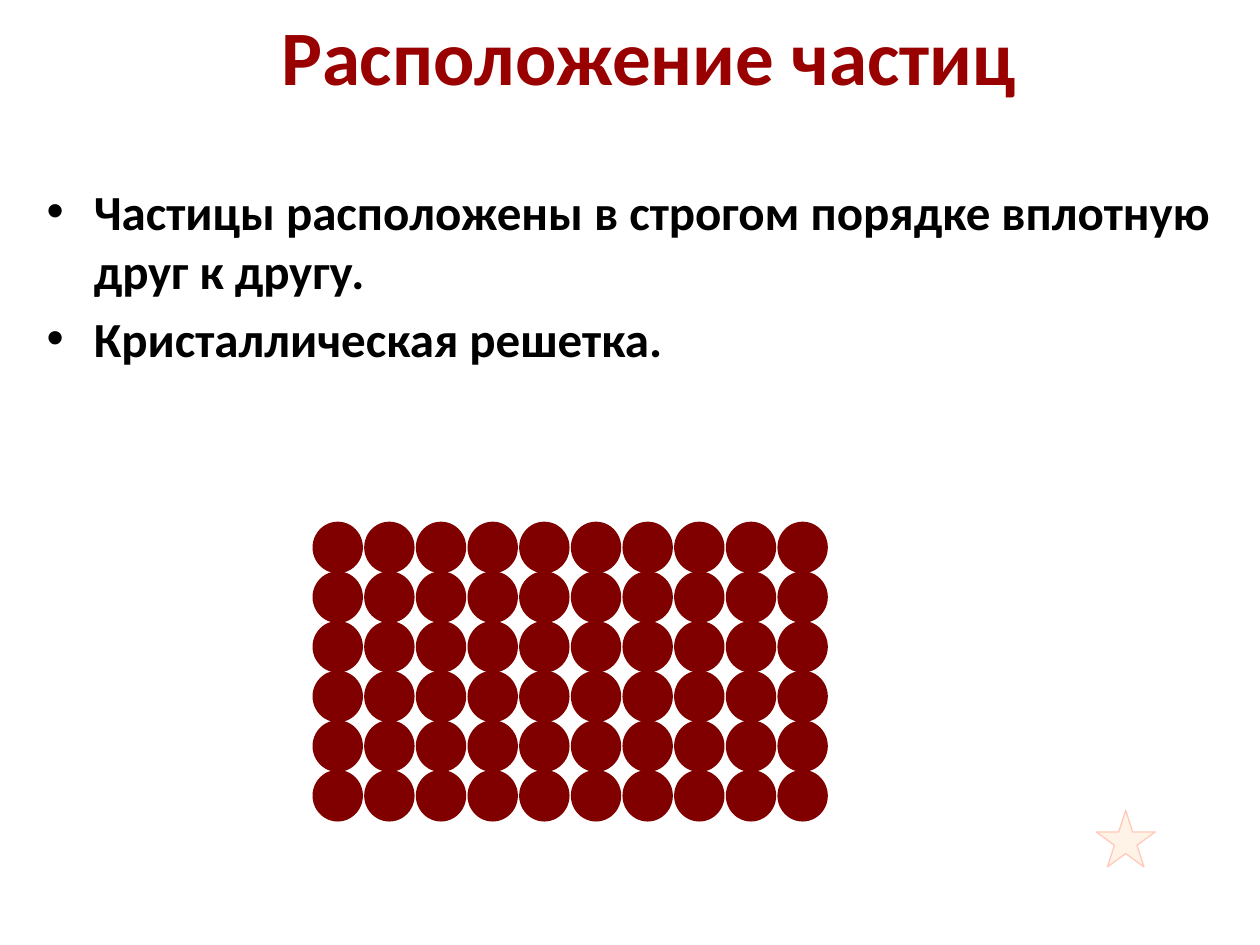
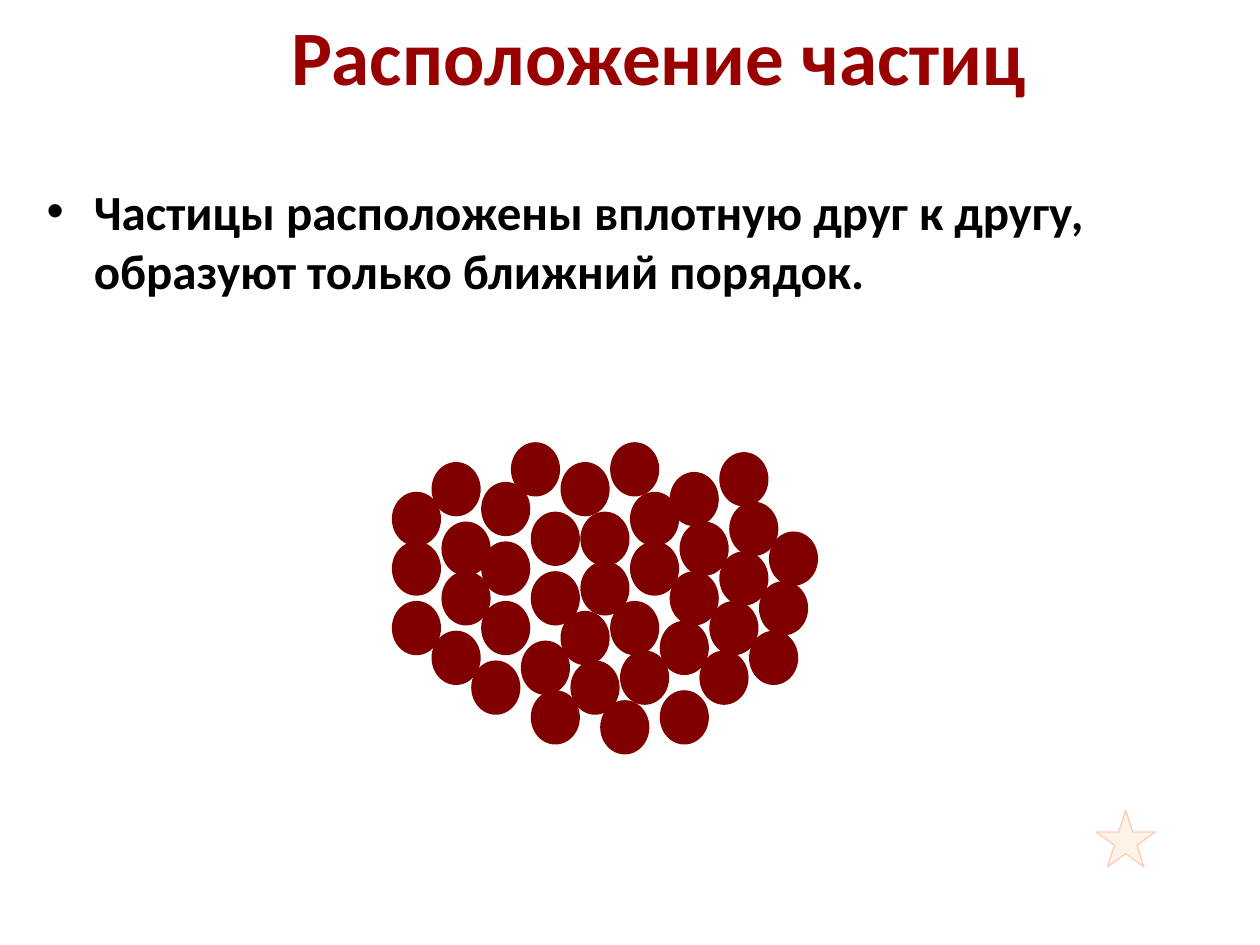
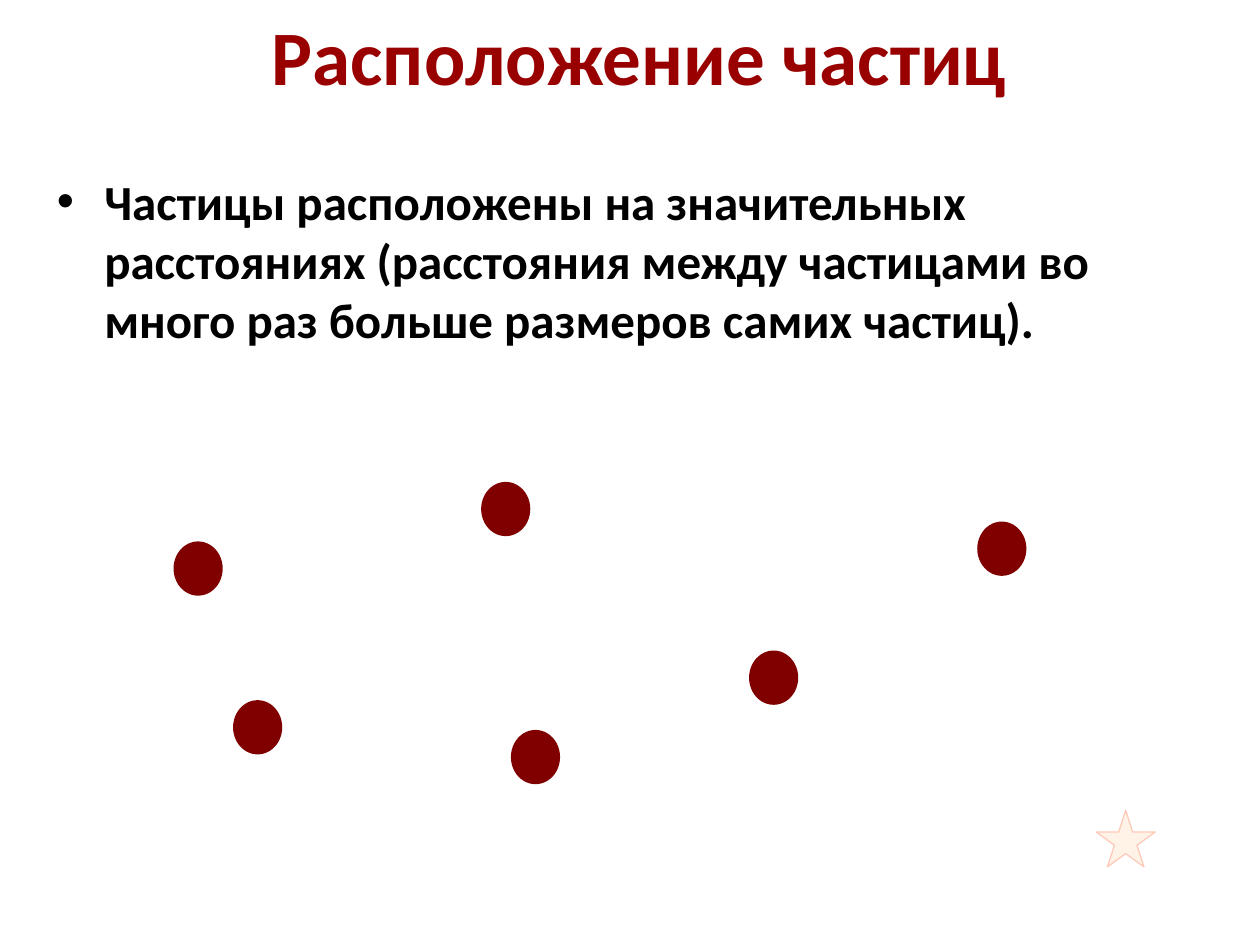
from dataclasses import dataclass
from itertools import product

from lxml.etree import SubElement as Sub
from pptx import Presentation
from pptx.dml.color import RGBColor
from pptx.enum.shapes import MSO_SHAPE as Form
from pptx.enum.text import MSO_ANCHOR as Anchor, PP_ALIGN as Align
from pptx.oxml.ns import qn
from pptx.util import Pt

# Shared look
FONT = "Calibri"
RED = RGBColor(0x99, 0x00, 0x00)
BLACK = RGBColor(0x00, 0x00, 0x00)
MAROON = RGBColor(0x80, 0x00, 0x00)
CREAM = RGBColor(0xFF, 0xF3, 0xE7)
PEACH = RGBColor(0xFF, 0xCA, 0xB9)
TITLE = "Расположение частиц"
INDENT = Pt(27)


@dataclass(frozen=True)
class Box:
    left: float
    top: float
    width: float
    height: float

    def emu(self) -> tuple:
        return Pt(self.left), Pt(self.top), Pt(self.width), Pt(self.height)


@dataclass(frozen=True)
class Model:
    """Particles of one size, placed by column and row on a grid."""
    left: float
    top: float
    step_x: float
    step_y: float
    width: float
    height: float
    cells: tuple

    def boxes(self) -> list[Box]:
        return [Box(self.left + col * self.step_x, self.top + row * self.step_y,
                    self.width, self.height) for col, row in self.cells]


@dataclass(frozen=True)
class Page:
    title_x: float
    body: Box
    points: tuple
    model: Model


STAR = Box(626.4, 463, 33.8, 32.4)


def loose(*cells: tuple) -> Model:
    """Particles off the lattice, set on a fine grid."""
    return Model(223.9, 252.7, 5.67, 5.67, 28.1, 31, cells)


# Solid, liquid and gas
SOLID = Model(178.6, 298.1, 29.52, 28.37, 28.8, 29.5,
              tuple((col, row) for row, col in product(range(6), range(10))))
LIQUID = loose(
    (5, 8), (5, 13), (0, 10), (9, 16), (8, 22), (17, 17), (14, 7), (13, 20),
    (9, 10), (4, 2), (0, 16), (38, 9), (4, 19), (9, 4), (0, 5), (14, 13),
    (19, 12), (19, 7), (17, 2), (12, 0), (24, 10), (22, 16), (18, 22), (23, 21),
    (27, 18), (28, 13), (24, 5), (22, 0), (29, 8), (28, 3), (31, 21), (32, 16),
    (33, 11), (34, 6), (33, 1), (36, 19), (27, 25), (37, 14), (21, 26), (14, 25))
GAS = loose((9, 4), (-22, 10), (36, 21), (59, 8), (12, 29), (-16, 26))

PAGES = (
    Page(64.8, Box(19.5, 100, 680.5, 136),
         ("Частицы расположены в строгом порядке вплотную друг к другу.",
          "Кристаллическая решетка."), SOLID),
    Page(70.5, Box(19.5, 100, 663, 91),
         ("Частицы расположены вплотную друг к другу, "
          "образуют только ближний порядок.",), LIQUID),
    Page(59.5, Box(25.5, 94.5, 612, 153),
         ("Частицы расположены на значительных расстояниях (расстояния между "
          "частицами во много раз больше размеров самих частиц).",), GAS),
)


def style(para, size: float, color: RGBColor) -> None:
    for run in para.runs:
        font = run.font
        font.name, font.size, font.bold = FONT, Pt(size), True
        font.color.rgb = color


def add_text(slide, box: Box):
    frame = slide.shapes.add_textbox(*box.emu()).text_frame
    frame.word_wrap = True
    return frame


def add_title(slide, left: float) -> None:
    frame = add_text(slide, Box(left, 0, 612, 63))
    frame.vertical_anchor = Anchor.MIDDLE
    frame.text = TITLE
    para = frame.paragraphs[0]
    para.alignment = Align.CENTER
    style(para, 44, RED)


def add_points(slide, box: Box, points: tuple) -> None:
    frame = add_text(slide, box)
    frame.text = "\n".join(points)
    for num, para in enumerate(frame.paragraphs):
        if num:
            para.space_before = Pt(5.6)
        props = para._p.get_or_add_pPr()
        props.set("marL", str(INDENT))
        props.set("indent", str(-INDENT))
        Sub(props, qn("a:buFont"), typeface="Arial")
        Sub(props, qn("a:buChar"), char="•")
        style(para, 28, BLACK)


def add_form(shapes, form: Form, box: Box, fill: RGBColor,
             line: RGBColor | None = None) -> None:
    shape = shapes.add_shape(form, *box.emu())
    shape.shadow.inherit = False
    shape.fill.solid()
    shape.fill.fore_color.rgb = fill
    if line is None:
        shape.line.fill.background()
    else:
        shape.line.color.rgb = line
        shape.line.width = Pt(0.75)


def add_page(deck, page: Page) -> None:
    slide = deck.slides.add_slide(deck.slide_layouts[6])
    add_title(slide, page.title_x)
    add_points(slide, page.body, page.points)
    add_form(slide.shapes, Form.STAR_5_POINT, STAR, CREAM, PEACH)
    group = slide.shapes.add_group_shape()
    for box in page.model.boxes():
        add_form(group.shapes, Form.OVAL, box, MAROON)


def main() -> None:
    deck = Presentation()
    deck.slide_width, deck.slide_height = Pt(720), Pt(540)
    for page in PAGES:
        add_page(deck, page)
    deck.save("out.pptx")


if __name__ == "__main__":
    main()
